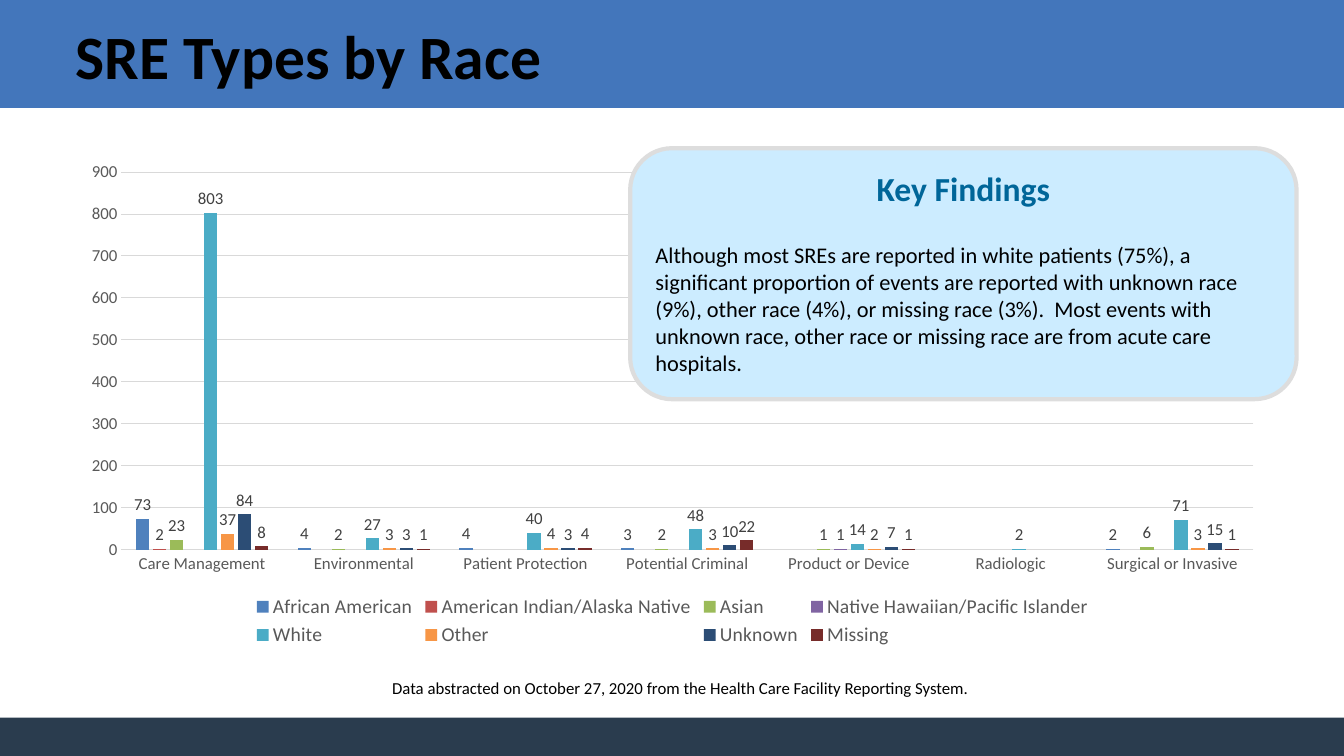
from pptx import Presentation
from pptx.chart.data import CategoryChartData
from pptx.dml.color import RGBColor
from pptx.enum.chart import XL_CHART_TYPE, XL_LABEL_POSITION, XL_LEGEND_POSITION, XL_TICK_MARK
from pptx.enum.shapes import MSO_SHAPE
from pptx.enum.text import MSO_ANCHOR, PP_ALIGN
from pptx.util import Inches, Pt

# Content
TITLE = "SRE Types by Race"
HEAD = "Key Findings"
FINDING = (
    "Although most SREs are reported in white patients (75%), a significant "
    "proportion of events are reported with unknown race (9%), other race (4%), "
    "or missing race (3%).  Most events with unknown race, other race or missing "
    "race are from acute care hospitals."
)
NOTE = "Data abstracted on October 27, 2020 from the Health Care Facility Reporting System."
TYPES = ["Care Management", "Environmental", "Patient Protection", "Potential Criminal",
         "Product or Device", "Radiologic", "Surgical or Invasive"]
RACES = [
    ("African American", RGBColor(0x4F, 0x81, 0xBD), [73, 4, 4, 3, None, None, 2]),
    ("American Indian/Alaska Native", RGBColor(0xC0, 0x50, 0x4D), [2] + [None] * 6),
    ("Asian", RGBColor(0x9B, 0xBB, 0x59), [23, 2, None, 2, 1, None, 6]),
    ("Native Hawaiian/Pacific Islander", RGBColor(0x80, 0x64, 0xA2),
     [None, None, None, None, 1, None, None]),
    ("White", RGBColor(0x4B, 0xAC, 0xC6), [803, 27, 40, 48, 14, 2, 71]),
    ("Other", RGBColor(0xF7, 0x96, 0x46), [37, 3, 4, 3, 2, None, 3]),
    ("Unknown", RGBColor(0x2C, 0x4D, 0x75), [84, 3, 3, 10, 7, None, 15]),
    ("Missing", RGBColor(0x77, 0x2C, 0x2A), [8, 1, 4, 22, 1, None, 1]),
]

# Colours and sizes
BLACK = RGBColor(0, 0, 0)
BLUE = RGBColor(0x43, 0x76, 0xBB)
NAVY = RGBColor(0x2A, 0x3C, 0x4E)
PALE = RGBColor(0xCC, 0xEC, 0xFF)
TEAL = RGBColor(0x00, 0x66, 0x99)
EDGE = RGBColor(0xDD, 0xDD, 0xDD)
GRID = RGBColor(0xD9, 0xD9, 0xD9)
GRAY = RGBColor(0x59, 0x59, 0x59)
DARK = RGBColor(0x40, 0x40, 0x40)
FONT = "Calibri"
WIDTH, HEIGHT, FOOT = 13.33, 7.5, 0.38


def style(font, size, color=BLACK, bold=False):
    font.name, font.size, font.bold = FONT, Pt(size), bold
    font.color.rgb = color


def write(para, text, size, color=BLACK, bold=False, align=PP_ALIGN.LEFT, before=0):
    para.alignment = align
    if before:
        para.space_before = Pt(before)
    run = para.add_run()
    run.text = text
    style(run.font, size, color, bold)


def block(kind, box, fill):
    shape = slide.shapes.add_shape(kind, *map(Inches, box))
    shape.shadow.inherit = False
    shape.fill.solid()
    shape.fill.fore_color.rgb = fill
    shape.line.fill.background()
    return shape


deck = Presentation()
deck.slide_width, deck.slide_height = Inches(WIDTH), Inches(HEIGHT)
slide = deck.slides.add_slide(deck.slide_layouts[5])

# Bands at the top and bottom, with the title above them
block(MSO_SHAPE.RECTANGLE, (0, 0, WIDTH, 1.07), BLUE)
block(MSO_SHAPE.RECTANGLE, (0, HEIGHT - FOOT, WIDTH, FOOT), NAVY)
title = slide.shapes.title
title.element.getparent().append(title.element)
title.left, title.top, title.width, title.height = map(Inches, (0.65, 0.06, 12, 0.96))
title.text_frame.vertical_anchor = MSO_ANCHOR.MIDDLE
write(title.text_frame.paragraphs[0], TITLE, 44, bold=True)

# Chart
data = CategoryChartData()
data.categories = TYPES
for name, color, vals in RACES:
    data.add_series(name, vals)
chart = slide.shapes.add_chart(XL_CHART_TYPE.COLUMN_CLUSTERED,
                               *map(Inches, (0.67, 1.51, 12, 4.95)), data).chart
style(chart.font, 10)
chart.has_title = False
chart.has_legend = True
chart.legend.position = XL_LEGEND_POSITION.BOTTOM
chart.legend.include_in_layout = False
style(chart.legend.font, 14, GRAY)

plot = chart.plots[0]
plot.gap_width, plot.overlap, plot.vary_by_categories = 219, -27, False
for series, (name, color, vals) in zip(plot.series, RACES):
    series.format.fill.solid()
    series.format.fill.fore_color.rgb = color
    series.invert_if_negative = False
    labels = series.data_labels
    labels.show_value = True
    labels.position = XL_LABEL_POSITION.OUTSIDE_END
    style(labels.font, 12, DARK)

# Axes
cat, val = chart.category_axis, chart.value_axis
for axis in (cat, val):
    axis.major_tick_mark = axis.minor_tick_mark = XL_TICK_MARK.NONE
    style(axis.tick_labels.font, 12, GRAY)
val.minimum_scale, val.maximum_scale, val.major_unit = 0, 900, 100
val.has_major_gridlines = True
val.format.line.fill.background()
for line in (cat.format.line, val.major_gridlines.format.line):
    line.color.rgb, line.width = GRID, Pt(0.75)

# Source note
note = slide.shapes.add_textbox(*map(Inches, (3.79, 6.67, 6.45, 0.3))).text_frame
note.word_wrap = True
write(note.paragraphs[0], NOTE, 12)

# Key findings
card = block(MSO_SHAPE.ROUNDED_RECTANGLE, (6.25, 1.47, 6.61, 2.49), PALE)
card.line.color.rgb, card.line.width = EDGE, Pt(3)
frame = card.text_frame
frame.word_wrap = True
frame.vertical_anchor = MSO_ANCHOR.TOP
frame.margin_left = frame.margin_right = Inches(0.13)
frame.margin_top = frame.margin_bottom = Inches(0.07)
write(frame.paragraphs[0], HEAD, 24, TEAL, bold=True, align=PP_ALIGN.CENTER)
write(frame.add_paragraph(), FINDING, 16, before=24)

deck.save("out.pptx")
